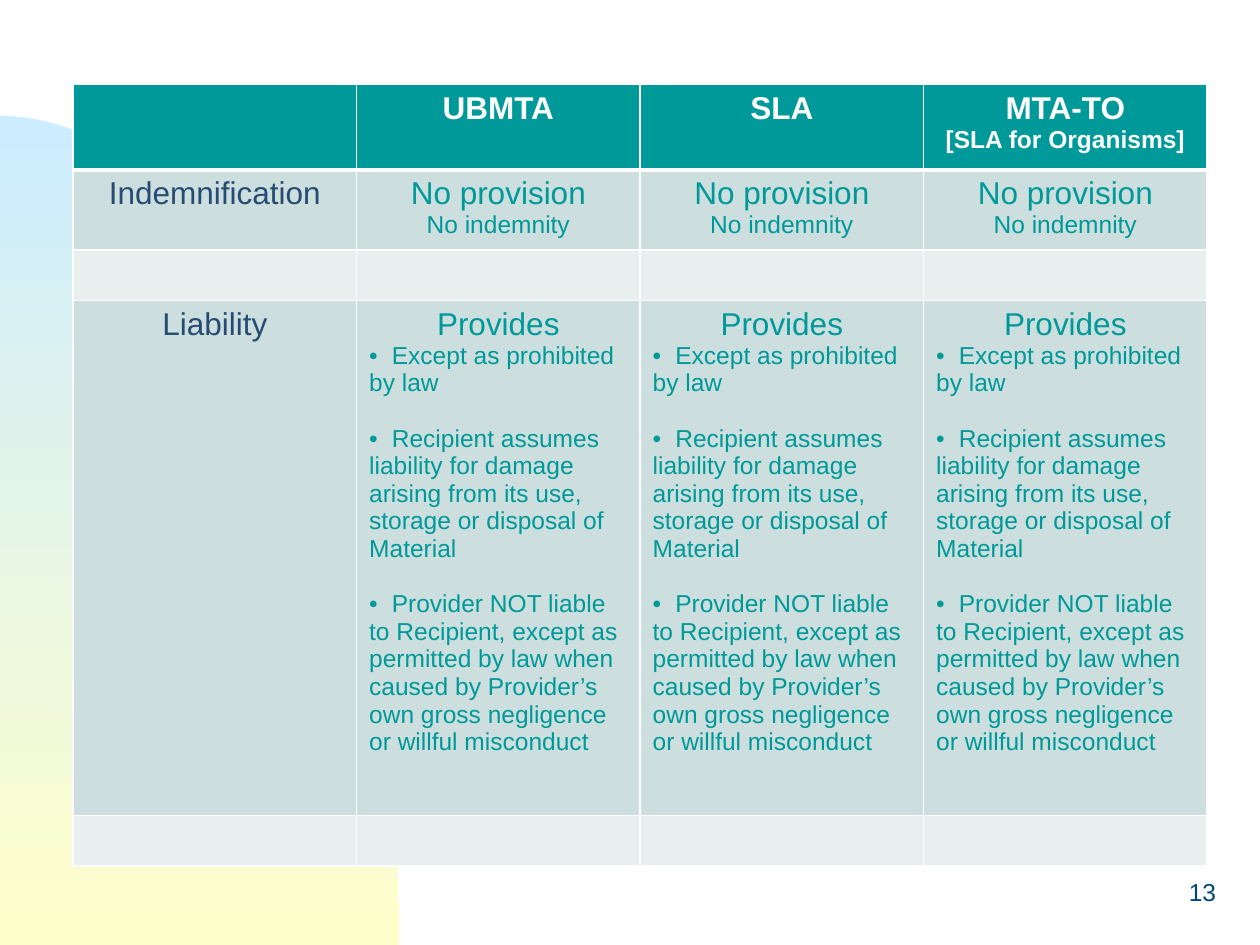
from dataclasses import dataclass

import pptx
import pptx.dml.color
import pptx.enum.text
import pptx.oxml
import pptx.oxml.ns
import pptx.util
from pptx.util import Inches

COLORS = {
    "white": "FFFFFF", "teal": "009999", "navy": "264C73", "number": "004873",
    "band": "CCDEDE", "light": "E7EFEF", "sky": "CCECFF", "cream": "FFFFCC",
}
ALIGN = pptx.enum.text.PP_ALIGN
NS = pptx.oxml.ns.nsdecls("a")


@dataclass
class Line:
    text: str
    color: str = "teal"
    size: int = 14
    bold: bool = False
    bullet: bool = False
    gap: int = 0


def rgb(name: str) -> pptx.dml.color.RGBColor:
    return pptx.dml.color.RGBColor.from_string(COLORS[name])


def write_lines(frame, lines: list[Line], align=ALIGN.CENTER) -> None:
    for index, line in enumerate(lines):
        paragraph = frame.paragraphs[0] if index == 0 else frame.add_paragraph()
        paragraph.text = line.text
        paragraph.alignment = ALIGN.LEFT if line.bullet else align
        if line.bullet:
            add_bullet(paragraph)
        if line.gap:
            paragraph.space_before = pptx.util.Pt(line.gap)
        font = paragraph.font
        font.name = "Arial"
        font.size = pptx.util.Pt(line.size)
        font.bold = line.bold
        font.color.rgb = rgb(line.color)


def add_bullet(paragraph) -> None:
    """Start the paragraph with a bullet and a tab; later lines return to the margin."""
    paragraph.text = "\t" + paragraph.text
    properties = paragraph._p.get_or_add_pPr()
    properties.set("marL", "0")
    properties.set("indent", "0")
    for xml in (
        f'<a:buFont {NS} typeface="Arial"/>',
        f'<a:buChar {NS} char="•"/>',
        f'<a:tabLst {NS}><a:tab pos="{Inches(0.18)}" algn="l"/></a:tabLst>',
    ):
        properties.append(pptx.oxml.parse_xml(xml))


def set_borders(cell, top: int = 1, bottom: int = 1) -> None:
    properties = cell._tc.get_or_add_tcPr()
    widths = {"lnL": 1, "lnR": 1, "lnT": top, "lnB": bottom}
    for index, (side, width) in enumerate(widths.items()):
        properties.insert(index, pptx.oxml.parse_xml(
            f'<a:{side} {NS} w="{pptx.util.Pt(width)}"><a:solidFill>'
            f'<a:srgbClr val="{COLORS["white"]}"/></a:solidFill></a:{side}>'))


def draw_backdrop(slide) -> None:
    """Quarter-oval with a vertical gradient in the lower left corner."""
    top, right, bottom, steps = 0.92, 3.17, 7.5, 48
    curve = []
    for step in range(1, steps + 1):
        t = step / steps
        weights = ((1 - t) ** 3, 3 * t * (1 - t) ** 2, 3 * t ** 2 * (1 - t), t ** 3)
        x = sum(w * v for w, v in zip(weights, (0, 1.75, right, right)))
        y = sum(w * v for w, v in zip(weights, (top, top, 3.87, bottom)))
        curve.append((Inches(x), Inches(y)))
    builder = slide.shapes.build_freeform(0, Inches(top))
    builder.add_line_segments(curve + [(0, Inches(bottom))], close=True)
    backdrop = builder.convert_to_shape()
    backdrop.shadow.inherit = False
    backdrop.line.fill.background()
    backdrop.fill.gradient()
    backdrop.fill.gradient_angle = 270
    for stop, color, position in zip(
            backdrop.fill.gradient_stops, ("sky", "cream"), (0, 1)):
        stop.color.rgb = rgb(color)
        stop.position = position


def draw_table(slide, rows: list[list[list[Line]]], heights: list[float]) -> None:
    table = slide.shapes.add_table(
        len(rows), 4, Inches(0.58), Inches(0.67), Inches(9), Inches(sum(heights))).table
    for column in table.columns:
        column.width = Inches(2.25)
    for r, (row, height) in enumerate(zip(rows, heights)):
        table.rows[r].height = Inches(height)
        fill = "teal" if r == 0 else "band" if r % 2 else "light"
        for c, lines in enumerate(row):
            cell = table.cell(r, c)
            cell.fill.solid()
            cell.fill.fore_color.rgb = rgb(fill)
            set_borders(cell, top=3 if r == 1 else 1, bottom=3 if r == 0 else 1)
            write_lines(cell.text_frame, lines)


def draw_page_number(slide, number: str) -> None:
    box = slide.shapes.add_textbox(Inches(7.67), Inches(6.83), Inches(2.08), Inches(0.5))
    box.text_frame.word_wrap = True
    box.text_frame.vertical_anchor = pptx.enum.text.MSO_ANCHOR.MIDDLE
    write_lines(box.text_frame, [Line(number, "number")], ALIGN.RIGHT)


def heading(text: str) -> Line:
    return Line(text, "white", 18, bold=True)


def main() -> None:
    presentation = pptx.Presentation()
    presentation.slide_width, presentation.slide_height = Inches(10), Inches(7.5)
    slide = presentation.slides.add_slide(presentation.slide_layouts[6])

    indemnity = [Line("No provision", size=18), Line("No indemnity")]
    liability = [
        Line("Provides", size=18),
        Line("Except as prohibited by law", bullet=True),
        Line("Recipient assumes liability for damage arising from its use, "
             "storage or disposal of Material", bullet=True, gap=16),
        Line("Provider NOT liable to Recipient, except as permitted by law when "
             "caused by Provider’s own gross negligence or willful misconduct",
             bullet=True, gap=16),
    ]
    blank_row = [[]] * 4
    rows = [
        [[], [heading("UBMTA")], [heading("SLA")],
         [heading("MTA-TO"), Line("[SLA for Organisms]", "white", bold=True)]],
        [[Line("Indemnification", "navy", 18)]] + [indemnity] * 3,
        blank_row,
        [[Line("Liability", "navy", 18)]] + [liability] * 3,
        blank_row,
    ]
    draw_backdrop(slide)
    draw_page_number(slide, "13")
    draw_table(slide, rows, [0.68, 0.62, 0.39, 4.09, 0.39])
    presentation.save("out.pptx")


if __name__ == "__main__":
    main()
